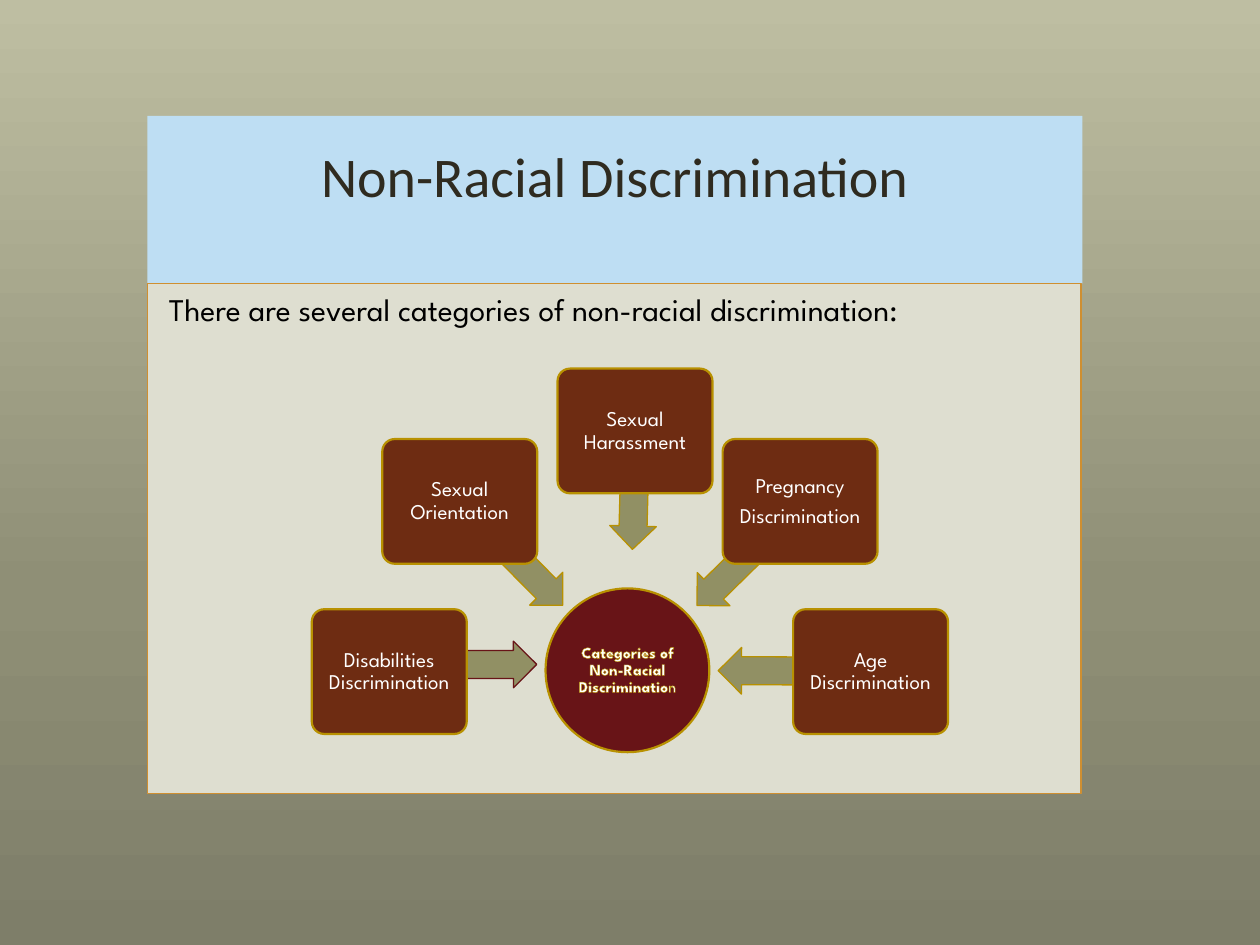
from copy import deepcopy
from math import cos, radians, sin

from lxml.etree import SubElement
from pptx import Presentation
from pptx.dml.color import RGBColor
from pptx.enum.shapes import MSO_SHAPE
from pptx.enum.text import MSO_ANCHOR, PP_ALIGN
from pptx.oxml.ns import qn
from pptx.util import Inches, Pt

COLORS = {
    "title_band": "BEDEF3", "title_text": "2F2B20", "panel": "DEDED0",
    "panel_line": "CF8F31", "black": "000000", "white": "FFFFFF",
    "hub": "681417", "box": "6E2C12", "gold": "B89101", "arrow": "919064",
}
BACKGROUND_STOPS = [(0, "BEBEA2"), (0.62, "8F8F76"), (1, "7E7E69")]
BODY_FONT = "League Spartan"

# Boxes sit on a circle around this point
CENTER_X, CENTER_Y, RADIUS = 5.0, 5.33, 1.91
BOX_WIDTH, BOX_HEIGHT = 1.23, 0.99
ARROW_HEIGHT = 0.37

# Lines of the label, angle, sideways shift of the box,
# arrow (left, top, width, rotation), arrow outline
CATEGORIES = [
    (["Disabilities Discrimination"], 180, 0, (3.08, 5.09, 1.18, 179.8), "hub"),
    (["Sexual Orientation"], 135, 0, (3.46, 4.2, 1.18, 225.2), "gold"),
    (["Sexual Harassment"], 90, 0.04, (4.44, 3.58, 1.19, 271.5), "gold"),
    (["Pregnancy", "Discrimination"], 45, 0, (5.36, 4.2, 1.2, 315.5), "gold"),
    (["Age Discrimination"], 0, 0, (5.7, 5.14, 1.21, 0.2), "gold"),
]


def color(name):
    return RGBColor.from_string(COLORS[name])


def set_background(slide):
    fill = slide.background.fill
    fill.gradient()
    fill.gradient_angle = 270
    stop_list = next(slide.element.iter(qn("a:gsLst")))
    stop_list.insert(1, deepcopy(stop_list[0]))
    for stop, (position, value) in zip(fill.gradient_stops, BACKGROUND_STOPS):
        stop.position = position
        stop.color.rgb = RGBColor.from_string(value)


def add_block(slide, kind, left, top, width, height, fill, line=None, line_width=0.75):
    shape = slide.shapes.add_shape(
        kind, Inches(left), Inches(top), Inches(width), Inches(height))
    shape.shadow.inherit = False
    shape.fill.solid()
    shape.fill.fore_color.rgb = color(fill)
    if line:
        shape.line.color.rgb = color(line)
        shape.line.width = Pt(line_width)
    else:
        shape.line.fill.background()
    return shape


def set_frame(shape, anchor, margin=None):
    frame = shape.text_frame
    frame.word_wrap = True
    frame.vertical_anchor = anchor
    if margin is not None:
        frame.margin_left = frame.margin_right = Inches(margin)
        frame.margin_top = frame.margin_bottom = Inches(margin)
    return frame


def add_run(paragraph, text, size, font_color, font_name=BODY_FONT, bold=False):
    run = paragraph.add_run()
    run.text = text
    run.font.size = Pt(size)
    run.font.name = font_name
    run.font.bold = bold
    run.font.color.rgb = color(font_color)
    return run


def outline_text(run, line_color):
    """Draw a thin outline around the letters of a run."""
    properties = run.font._element
    line = SubElement(properties, qn("a:ln"), w=str(Pt(0.75)))
    fill = SubElement(line, qn("a:solidFill"))
    SubElement(fill, qn("a:srgbClr"), val=COLORS[line_color])
    properties.insert(0, line)


def format_label(paragraph, size):
    paragraph.alignment = PP_ALIGN.CENTER
    paragraph.line_spacing = 0.9
    paragraph.space_after = Pt(size * 0.35)


def add_title(slide):
    band = add_block(slide, MSO_SHAPE.RECTANGLE, 1.17, 0.92, 7.42, 1.33, "title_band")
    frame = set_frame(band, MSO_ANCHOR.BOTTOM)
    frame.margin_bottom = Inches(0.59)
    paragraph = frame.paragraphs[0]
    paragraph.alignment = PP_ALIGN.CENTER
    add_run(paragraph, "Non-Racial Discrimination", 32, "title_text", "Calibri")


def add_body(slide):
    panel = add_block(slide, MSO_SHAPE.RECTANGLE, 1.17, 2.25, 7.41, 4.05,
                      "panel", "panel_line")
    frame = set_frame(panel, MSO_ANCHOR.TOP)
    frame.margin_left = Inches(0.17)
    paragraph = frame.paragraphs[0]
    paragraph.alignment = PP_ALIGN.LEFT
    add_run(paragraph, "There are several categories of non-racial discrimination:",
            18, "black")


def add_hub(slide):
    hub = add_block(slide, MSO_SHAPE.OVAL, 4.33, 4.67, 1.3, 1.3, "hub", "gold", 1.25)
    paragraph = set_frame(hub, MSO_ANCHOR.MIDDLE, 0.01).paragraphs[0]
    format_label(paragraph, 9)
    for text, bold in [("Categories of Non-Racial Discriminatio", True), ("n", False)]:
        outline_text(add_run(paragraph, text, 9, "white", bold=bold), "gold")


def add_arrow(slide, left, top, width, rotation, line):
    arrow = add_block(slide, MSO_SHAPE.LEFT_ARROW, left, top, width, ARROW_HEIGHT,
                      "arrow", line)
    arrow.adjustments[0] = 0.6
    arrow.adjustments[1] = 0.5
    arrow.rotation = rotation


def add_category(slide, lines, angle, shift):
    left = CENTER_X + RADIUS * cos(radians(angle)) + shift - BOX_WIDTH / 2
    top = CENTER_Y - RADIUS * sin(radians(angle)) - BOX_HEIGHT / 2
    box = add_block(slide, MSO_SHAPE.ROUNDED_RECTANGLE, left, top,
                    BOX_WIDTH, BOX_HEIGHT, "box", "gold", 1.25)
    box.adjustments[0] = 0.1
    frame = set_frame(box, MSO_ANCHOR.MIDDLE, 0.03)
    for index, text in enumerate(lines):
        paragraph = frame.add_paragraph() if index else frame.paragraphs[0]
        format_label(paragraph, 12)
        add_run(paragraph, text, 12, "white")


def main():
    presentation = Presentation()
    presentation.slide_width = Inches(10)
    presentation.slide_height = Inches(7.5)
    slide = presentation.slides.add_slide(presentation.slide_layouts[6])
    set_background(slide)

    # Title and body panel
    add_title(slide)
    add_body(slide)

    # Diagram: hub, then each arrow under its box
    add_hub(slide)
    for lines, angle, shift, arrow, arrow_line in CATEGORIES:
        add_arrow(slide, *arrow, arrow_line)
        add_category(slide, lines, angle, shift)

    presentation.save("out.pptx")


if __name__ == "__main__":
    main()
